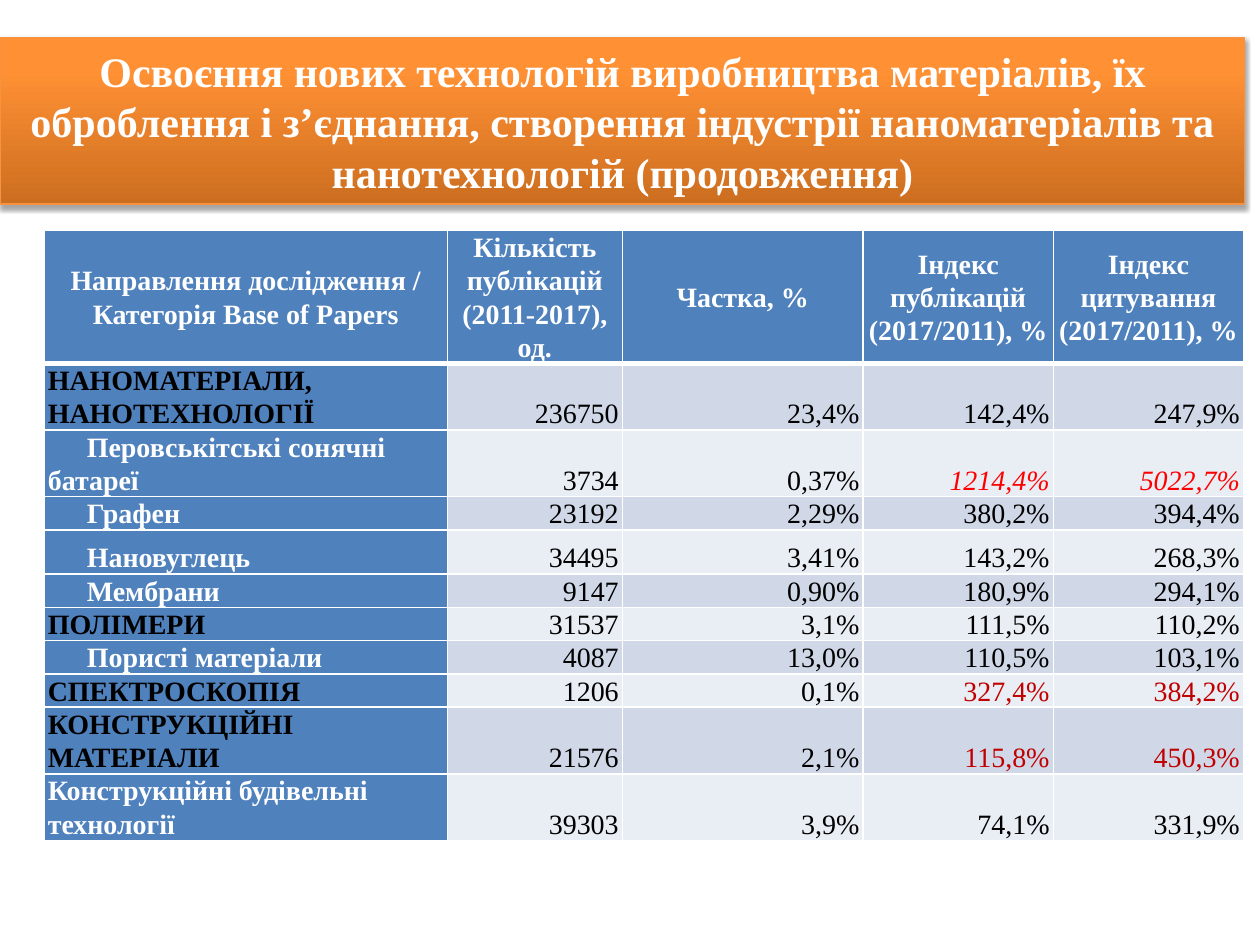
import copy
import dataclasses
import typing

import pptx
import pptx.dml.color
import pptx.enum.shapes
import pptx.enum.text
import pptx.oxml
import pptx.oxml.ns
import pptx.util

RGBColor = pptx.dml.color.RGBColor
WHITE = RGBColor(0xFF, 0xFF, 0xFF)
BLACK = RGBColor(0x00, 0x00, 0x00)
RED = RGBColor(0xFF, 0x00, 0x00)
DARK_RED = RGBColor(0xC0, 0x00, 0x00)
BLUE = RGBColor(0x4F, 0x81, 0xBD)
BANDS = (RGBColor(0xD0, 0xD8, 0xE8), RGBColor(0xE9, 0xED, 0xF4))
ORANGE_EDGE = RGBColor(0xF6, 0x92, 0x40)
ORANGE_STOPS = (
    (0, RGBColor(0xCC, 0x6E, 0x20)),
    (0.8, RGBColor(0xFF, 0x90, 0x34)),
    (1, RGBColor(0xFF, 0x91, 0x36)),
)

PAGE_WIDTH = pptx.util.Inches(10)
PAGE_HEIGHT = pptx.util.Inches(7.5)
FONT = "Times New Roman"
LINE_HEIGHT = 0.26
COLUMN_WIDTHS = (3.2, 1.39, 1.91, 1.51, 1.51)
ALIGN = pptx.enum.text.PP_ALIGN
ANCHOR = pptx.enum.text.MSO_ANCHOR

TITLE = (
    "Освоєння нових технологій виробництва матеріалів, їх оброблення "
    "і з’єднання, створення індустрії наноматеріалів та нанотехнологій (продовження)"
)
HEADINGS = (
    "Направлення дослідження / Категорія Base of Papers",
    "Кількість публікацій (2011-2017), од.",
    "Частка, %",
    "Індекс публікацій (2017/2011), %",
    "Індекс цитування (2017/2011), %",
)


@dataclasses.dataclass(frozen=True)
class Field:
    name: str
    values: tuple[str, str, str, str]
    name_color: RGBColor = WHITE
    indent: float = 0
    lines: float = 1
    index_color: RGBColor = BLACK
    index_italic: bool = False


@dataclasses.dataclass(frozen=True)
class CellLook:
    fill: RGBColor
    color: RGBColor
    align: ALIGN
    anchor: ANCHOR = ANCHOR.BOTTOM
    bold: bool = False
    italic: bool = False
    indent: float = 0
    bottom_border: float = 1
    top_border: float = 1


FIELDS = (
    Field("НАНОМАТЕРІАЛИ, НАНОТЕХНОЛОГІЇ", ("236750", "23,4%", "142,4%", "247,9%"), BLACK, lines=2),
    Field("Перовськітські сонячні батареї", ("3734", "0,37%", "1214,4%", "5022,7%"),
          indent=0.31, lines=2, index_color=RED, index_italic=True),
    Field("Графен", ("23192", "2,29%", "380,2%", "394,4%"), indent=0.31),
    Field("Нановуглець", ("34495", "3,41%", "143,2%", "268,3%"), indent=0.31, lines=1.35),
    Field("Мембрани", ("9147", "0,90%", "180,9%", "294,1%"), indent=0.31),
    Field("ПОЛІМЕРИ", ("31537", "3,1%", "111,5%", "110,2%"), BLACK),
    Field("Пористі матеріали", ("4087", "13,0%", "110,5%", "103,1%"), indent=0.31),
    Field("СПЕКТРОСКОПІЯ", ("1206", "0,1%", "327,4%", "384,2%"), BLACK, index_color=DARK_RED),
    Field("КОНСТРУКЦІЙНІ МАТЕРІАЛИ", ("21576", "2,1%", "115,8%", "450,3%"), BLACK,
          lines=2, index_color=DARK_RED),
    Field("Конструкційні будівельні технології", ("39303", "3,9%", "74,1%", "331,9%"), lines=2),
)


def apply_format(target: typing.Any, values: dict[str, typing.Any]) -> None:
    for name, value in values.items():
        setattr(target, name, value)


def write_text(para: typing.Any, text: str, size: float, color: RGBColor,
               bold: bool, italic: bool = False) -> None:
    span = para.add_run()
    span.text = text
    apply_format(span.font, {"name": FONT, "size": pptx.util.Pt(size), "bold": bold, "italic": italic})
    span.font.color.rgb = color


def add_title(page: typing.Any) -> None:
    box = page.shapes.add_shape(
        pptx.enum.shapes.MSO_SHAPE.RECTANGLE,
        0, int(PAGE_HEIGHT * 0.04), int(PAGE_WIDTH * 0.99), int(PAGE_HEIGHT * 0.18),
    )
    apply_format(box, {"width": pptx.util.Inches(9.88), "height": pptx.util.Inches(1.32)})
    box.fill.gradient()
    box.fill.gradient_angle = 90
    stop_list = box.element.spPr.find(".//" + pptx.oxml.ns.qn("a:gsLst"))
    stop_list.append(copy.deepcopy(stop_list[0]))
    for stop, (position, color) in zip(box.fill.gradient_stops, ORANGE_STOPS):
        stop.position = position
        stop.color.rgb = color
    box.line.color.rgb = ORANGE_EDGE
    box.line.width = pptx.util.Pt(0.75)
    box.shadow.inherit = False
    box.element.spPr.find(pptx.oxml.ns.qn("a:effectLst")).append(pptx.oxml.parse_xml(
        f'<a:outerShdw {pptx.oxml.ns.nsdecls("a")} blurRad="{pptx.util.Pt(3.1)}" '
        f'dist="{pptx.util.Pt(1.8)}" dir="5400000" rotWithShape="0">'
        '<a:srgbClr val="000000"><a:alpha val="35000"/></a:srgbClr></a:outerShdw>'
    ))
    apply_format(box.text_frame, {"word_wrap": True, "vertical_anchor": ANCHOR.MIDDLE})
    para = box.text_frame.paragraphs[0]
    para.alignment = ALIGN.CENTER
    write_text(para, TITLE, 24, WHITE, True)


def fill_cell(cell: typing.Any, text: str, look: CellLook) -> None:
    margin = pptx.util.Inches(0.03)
    apply_format(cell, {
        "margin_left": margin, "margin_right": margin, "margin_top": 0, "margin_bottom": 0,
        "vertical_anchor": look.anchor,
    })
    properties = cell._tc.get_or_add_tcPr()
    borders = {"L": 1, "R": 1, "T": look.top_border, "B": look.bottom_border}
    for side, width in borders.items():
        properties.append(pptx.oxml.parse_xml(
            f'<a:ln{side} {pptx.oxml.ns.nsdecls("a")} w="{pptx.util.Pt(width)}">'
            f'<a:solidFill><a:srgbClr val="{WHITE}"/></a:solidFill></a:ln{side}>'
        ))
    cell.fill.solid()
    cell.fill.fore_color.rgb = look.fill
    para = cell.text_frame.paragraphs[0]
    apply_format(para, {"alignment": look.align, "line_spacing": 1.07})
    if look.indent:
        para._p.get_or_add_pPr().set("indent", str(pptx.util.Inches(look.indent)))
    write_text(para, text, 16, look.color, look.bold, look.italic)


def add_field_table(page: typing.Any) -> None:
    line_counts = [4, *(field.lines for field in FIELDS)]
    frame = page.shapes.add_table(
        len(line_counts), len(COLUMN_WIDTHS),
        int(PAGE_WIDTH * 0.035), pptx.util.Inches(1.83),
        pptx.util.Inches(sum(COLUMN_WIDTHS)), pptx.util.Inches(sum(line_counts) * LINE_HEIGHT),
    )
    table = frame.table
    for column, width in zip(table.columns, COLUMN_WIDTHS):
        column.width = pptx.util.Inches(width)
    for row, lines in zip(table.rows, line_counts):
        row.height = pptx.util.Inches(lines * LINE_HEIGHT)

    heading_look = CellLook(BLUE, WHITE, ALIGN.CENTER, ANCHOR.MIDDLE, bold=True, bottom_border=3)
    for column, heading in enumerate(HEADINGS):
        fill_cell(table.cell(0, column), heading, heading_look)

    for row, field in enumerate(FIELDS, start=1):
        top_border = 3 if row == 1 else 1
        name_look = CellLook(BLUE, field.name_color, ALIGN.LEFT, bold=True,
                             indent=field.indent, top_border=top_border)
        value_look = CellLook(BANDS[(row - 1) % 2], BLACK, ALIGN.RIGHT, top_border=top_border)
        index_look = dataclasses.replace(value_look, color=field.index_color, italic=field.index_italic)
        looks = (name_look, value_look, value_look, index_look, index_look)
        for column, (text, look) in enumerate(zip((field.name, *field.values), looks)):
            fill_cell(table.cell(row, column), text, look)


def main() -> None:
    deck = pptx.Presentation()
    apply_format(deck, {"slide_width": PAGE_WIDTH, "slide_height": PAGE_HEIGHT})
    page = deck.slides.add_slide(deck.slide_layouts[6])
    add_title(page)
    add_field_table(page)
    deck.save("out.pptx")


if __name__ == "__main__":
    main()
